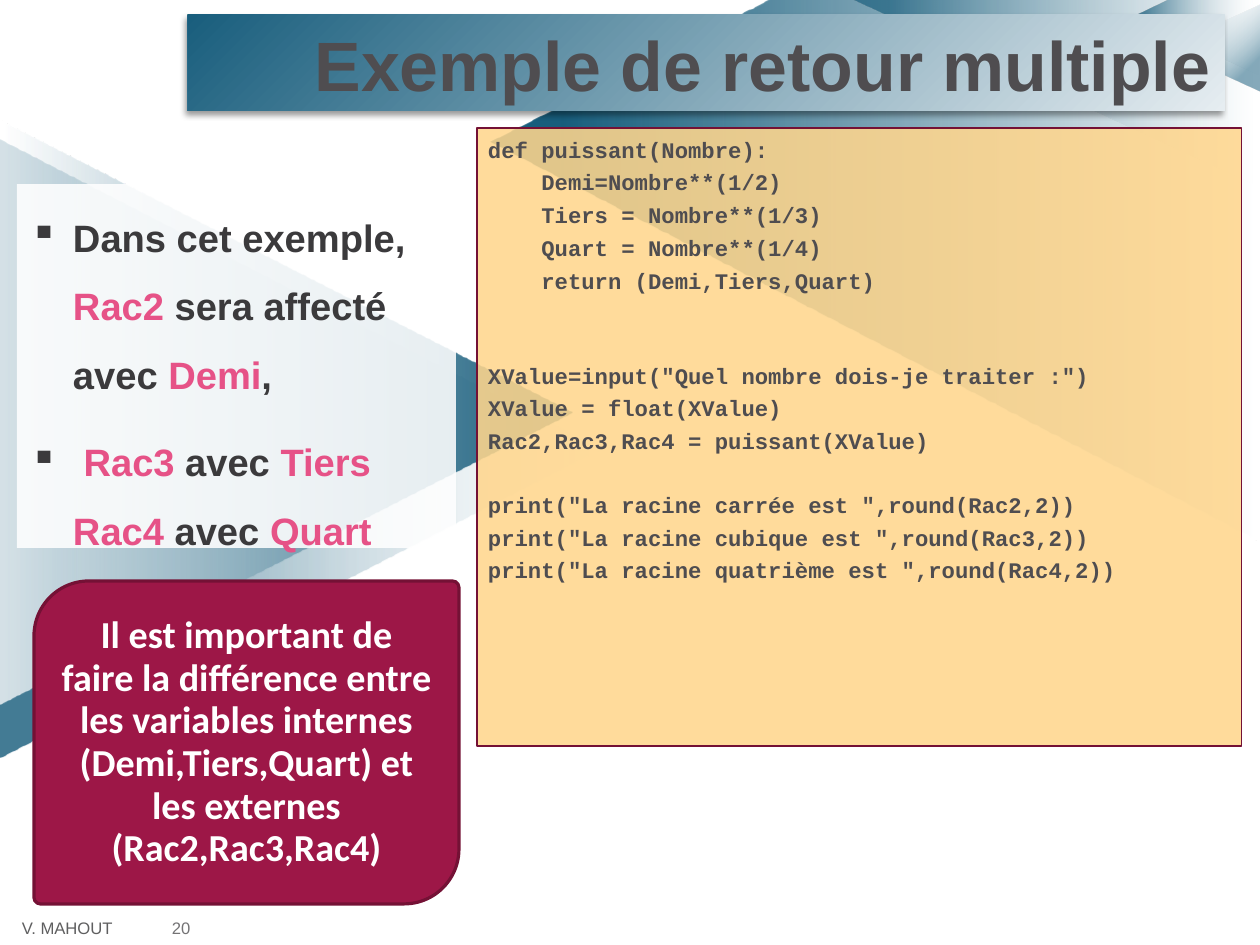
from dataclasses import dataclass
from typing import Any

from lxml import etree
from pptx import Presentation
from pptx.dml.color import RGBColor
from pptx.enum.shapes import MSO_SHAPE
from pptx.enum.text import MSO_ANCHOR, PP_ALIGN
from pptx.oxml.ns import qn
from pptx.util import Emu, Pt

RECTANGLE = MSO_SHAPE.RECTANGLE
TRIANGLE = MSO_SHAPE.ISOSCELES_TRIANGLE
DIAGONAL_ROUNDED = MSO_SHAPE.ROUND_2_DIAG_RECTANGLE
TOP, MIDDLE = MSO_ANCHOR.TOP, MSO_ANCHOR.MIDDLE
LEFT, CENTER, RIGHT = PP_ALIGN.LEFT, PP_ALIGN.CENTER, PP_ALIGN.RIGHT
EMU_PER_PX = 8000


@dataclass(frozen=True)
class Theme:
    white: str = "FFFFFF"
    petrol: str = "004D6F"
    title_dark: str = "195E7D"
    title_light: str = "E6EDF1"
    shadow: str = "000000"
    body: str = "3B3A3C"
    accent: str = "E65287"
    heading: str = "4F4D50"
    author: str = "5F5F60"
    number: str = "747375"
    code_fill: str = "FFD68D"
    note_fill: str = "9D1747"
    border: str = "741135"
    sans: str = "Arial"
    note_font: str = "Calibri"
    mono: str = "Courier New"
    title_size: float = 44
    body_size: float = 24
    code_size: float = 14
    footer_size: float = 10.5


THEME = Theme()


@dataclass(frozen=True)
class Stop:
    position: int
    color: str
    alpha: int = 100


@dataclass(frozen=True)
class Facet:
    stops: tuple[Stop, Stop]
    angle: int
    box: tuple[int, int, int, int] = (0, 0, 0, 0)
    rotation: int = 0
    points: tuple[tuple[int, int], ...] = ()


def fade(white_alpha: int, dark_alpha: int, start: int = 1, end: int = 91) -> tuple[Stop, Stop]:
    return Stop(start, THEME.white, white_alpha), Stop(end, THEME.petrol, dark_alpha)


FACETS = (
    Facet(fade(20, 73), 90, (-9, 149, 618, 600), 90),
    Facet(fade(77, 83), 270, (-7, 126, 585, 573), 90),
    Facet(fade(100, 90), 180, points=((1258, 540), (491, 142), (770, 0), (1260, 0))),
    Facet(fade(0, 53), 180, points=((1256, 185), (853, 0), (1257, 0))),
    Facet(fade(0, 63), 180, points=((1260, 75), (1134, 17), (1170, 0), (1260, 0))),
    Facet(fade(0, 48, 27, 81), 135, (1170, 1, 86, 94), 270),
)

BULLETS = (
    (("Dans cet exemple, ", False), ("Rac2", True), (" sera affecté avec ", False),
     ("Demi", True), (",", False)),
    ((" ", False), ("Rac3", True), (" avec ", False), ("Tiers Rac4", True),
     (" avec ", False), ("Quart", True)),
)

CODE_BLOCKS = (
    (0, ("def puissant(Nombre):", "    Demi=Nombre**(1/2)", "    Tiers = Nombre**(1/3)",
         "    Quart = Nombre**(1/4)", "    return (Demi,Tiers,Quart)")),
    (2, ('XValue=input("Quel nombre dois-je traiter :")', "XValue = float(XValue)",
         "Rac2,Rac3,Rac4 = puissant(XValue)")),
    (1, ('print("La racine carrée est ",round(Rac2,2))',
         'print("La racine cubique est ",round(Rac3,2))',
         'print("La racine quatrième est ",round(Rac4,2))')),
)
CODE_GAP = 3.8
CODE_PITCH = 19.6

NOTE = ("Il est important de faire la différence entre les variables internes "
        "(Demi,Tiers,Quart) et les externes (Rac2,Rac3,Rac4)")


def px(value: int) -> Emu:
    return Emu(value * EMU_PER_PX)


def add_element(parent: Any, tag: str, **attributes: Any) -> Any:
    values = {name: str(value) for name, value in attributes.items()}
    return etree.SubElement(parent, qn(tag), values)


def add_color(parent: Any, color: str, alpha: int) -> None:
    element = add_element(parent, "a:srgbClr", val=color)
    add_element(element, "a:alpha", val=alpha * 1000)


def fill_solid(shape: Any, color: str, alpha: int = 100) -> None:
    shape.fill.solid()
    shape.fill.fore_color.rgb = RGBColor.from_string(color)
    element = shape._element.spPr.find(qn("a:solidFill")).find(qn("a:srgbClr"))
    add_element(element, "a:alpha", val=alpha * 1000)


def fill_gradient(shape: Any, stops: tuple[Stop, Stop], angle: int | None = None) -> None:
    shape.fill.background()
    properties = shape._element.spPr
    gradient = etree.Element(qn("a:gradFill"), {"rotWithShape": "1"})
    stop_list = add_element(gradient, "a:gsLst")
    for stop in stops:
        element = add_element(stop_list, "a:gs", pos=stop.position * 1000)
        add_color(element, stop.color, stop.alpha)
    if angle is None:
        radial = add_element(gradient, "a:path", path="circle")
        add_element(radial, "a:fillToRect", r=100000, b=100000)
    else:
        add_element(gradient, "a:lin", ang=angle * 60000, scaled=0)
    properties.replace(properties.find(qn("a:noFill")), gradient)


def add_box(slide: Any, kind: Any, box: tuple[int, int, int, int]) -> Any:
    shape = slide.shapes.add_shape(kind, *(px(value) for value in box))
    shape.line.fill.background()
    shape.shadow.inherit = False
    return shape


def set_border(shape: Any, width: float) -> None:
    shape.line.color.rgb = RGBColor.from_string(THEME.border)
    shape.line.width = Pt(width)


def set_frame(shape: Any, side: int, top: int, anchor: Any = TOP) -> Any:
    frame = shape.text_frame
    frame.word_wrap = True
    frame.vertical_anchor = anchor
    frame.margin_left = frame.margin_right = px(side)
    frame.margin_top = frame.margin_bottom = px(top)
    return frame


def add_text(paragraph: Any, text: str, *, size: float, color: str, font: str = THEME.sans,
             bold: bool = True, align: Any = LEFT) -> None:
    paragraph.alignment = align
    run = paragraph.add_run()
    run.text = text
    run.font.name = font
    run.font.size = Pt(size)
    run.font.bold = bold
    run.font.color.rgb = RGBColor.from_string(color)


def draw_facet(slide: Any, facet: Facet) -> None:
    if facet.points:
        builder = slide.shapes.build_freeform(*facet.points[0], scale=EMU_PER_PX)
        builder.add_line_segments(facet.points[1:], close=True)
        shape = builder.convert_to_shape()
        shape.line.fill.background()
        shape.shadow.inherit = False
    else:
        shape = add_box(slide, TRIANGLE, facet.box)
        shape.rotation = facet.rotation
    fill_gradient(shape, facet.stops, facet.angle)


def draw_footer(slide: Any) -> None:
    shape = add_box(slide, RECTANGLE, (9, 913, 207, 32))
    fill_solid(shape, THEME.white)
    paragraph = set_frame(shape, 13, 7, MIDDLE).paragraphs[0]
    paragraph.line_spacing = 0.93
    tabs = add_element(paragraph._p.get_or_add_pPr(), "a:tabLst")
    add_element(tabs, "a:tab", pos=px(150), algn="l")
    add_text(paragraph, "V. MAHOUT\t", size=THEME.footer_size, color=THEME.author, bold=False)
    add_text(paragraph, "20", size=THEME.footer_size, color=THEME.number, bold=False)


def draw_explanation(slide: Any) -> None:
    shape = add_box(slide, RECTANGLE, (17, 184, 439, 364))
    fill_solid(shape, THEME.white, 87)
    frame = set_frame(shape, 13, 7)
    for index, segments in enumerate(BULLETS):
        paragraph = frame.add_paragraph() if index else frame.paragraphs[0]
        properties = paragraph._p.get_or_add_pPr()
        properties.set("marL", str(px(43)))
        properties.set("indent", str(px(-43)))
        add_element(properties, "a:buChar", char="▪")
        paragraph.line_spacing = 1.5
        if index:
            paragraph.space_before = Pt(12)
        for text, is_variable in segments:
            add_text(paragraph, text, size=THEME.body_size,
                     color=THEME.accent if is_variable else THEME.body)


def draw_title(slide: Any) -> None:
    shape = add_box(slide, RECTANGLE, (188, 15, 1037, 96))
    fill_gradient(shape, (Stop(0, THEME.title_dark), Stop(100, THEME.title_light)))
    effects = shape._element.spPr.find(qn("a:effectLst"))
    shadow = add_element(effects, "a:outerShdw", blurRad=Pt(4), dist=Pt(3),
                         dir=135 * 60000, algn="tr", rotWithShape=0)
    add_color(shadow, THEME.shadow, 40)
    paragraph = set_frame(shape, 13, 7).paragraphs[0]
    add_text(paragraph, "Exemple de retour multiple", size=THEME.title_size,
             color=THEME.heading, align=RIGHT)


def draw_code(slide: Any) -> None:
    shape = add_box(slide, RECTANGLE, (477, 128, 765, 618))
    fill_solid(shape, THEME.code_fill, 87)
    set_border(shape, 0.75)
    frame = set_frame(shape, 11, 8)
    for block_index, (skipped_lines, lines) in enumerate(CODE_BLOCKS):
        for line_index, line in enumerate(lines):
            is_first = block_index == line_index == 0
            paragraph = frame.paragraphs[0] if is_first else frame.add_paragraph()
            if not is_first:
                skipped = 0 if line_index else skipped_lines
                paragraph.space_before = Pt(CODE_GAP + skipped * CODE_PITCH)
            add_text(paragraph, line, size=THEME.code_size, color=THEME.heading, font=THEME.mono)


def draw_note(slide: Any) -> None:
    shape = add_box(slide, DIAGONAL_ROUNDED, (34, 581, 425, 323))
    shape.adjustments[0], shape.adjustments[1] = 0.17, 0.02
    fill_solid(shape, THEME.note_fill)
    set_border(shape, 2)
    paragraph = set_frame(shape, 11, 6, MIDDLE).paragraphs[0]
    paragraph.line_spacing = 0.93
    add_text(paragraph, NOTE, size=THEME.body_size, color=THEME.white,
             font=THEME.note_font, align=CENTER)


def main() -> None:
    presentation = Presentation()
    presentation.slide_width, presentation.slide_height = px(1260), px(945)
    slide = presentation.slides.add_slide(presentation.slide_layouts[6])
    for facet in FACETS:
        draw_facet(slide, facet)
    for draw in (draw_footer, draw_explanation, draw_title, draw_code, draw_note):
        draw(slide)
    presentation.save("out.pptx")


if __name__ == "__main__":
    main()
